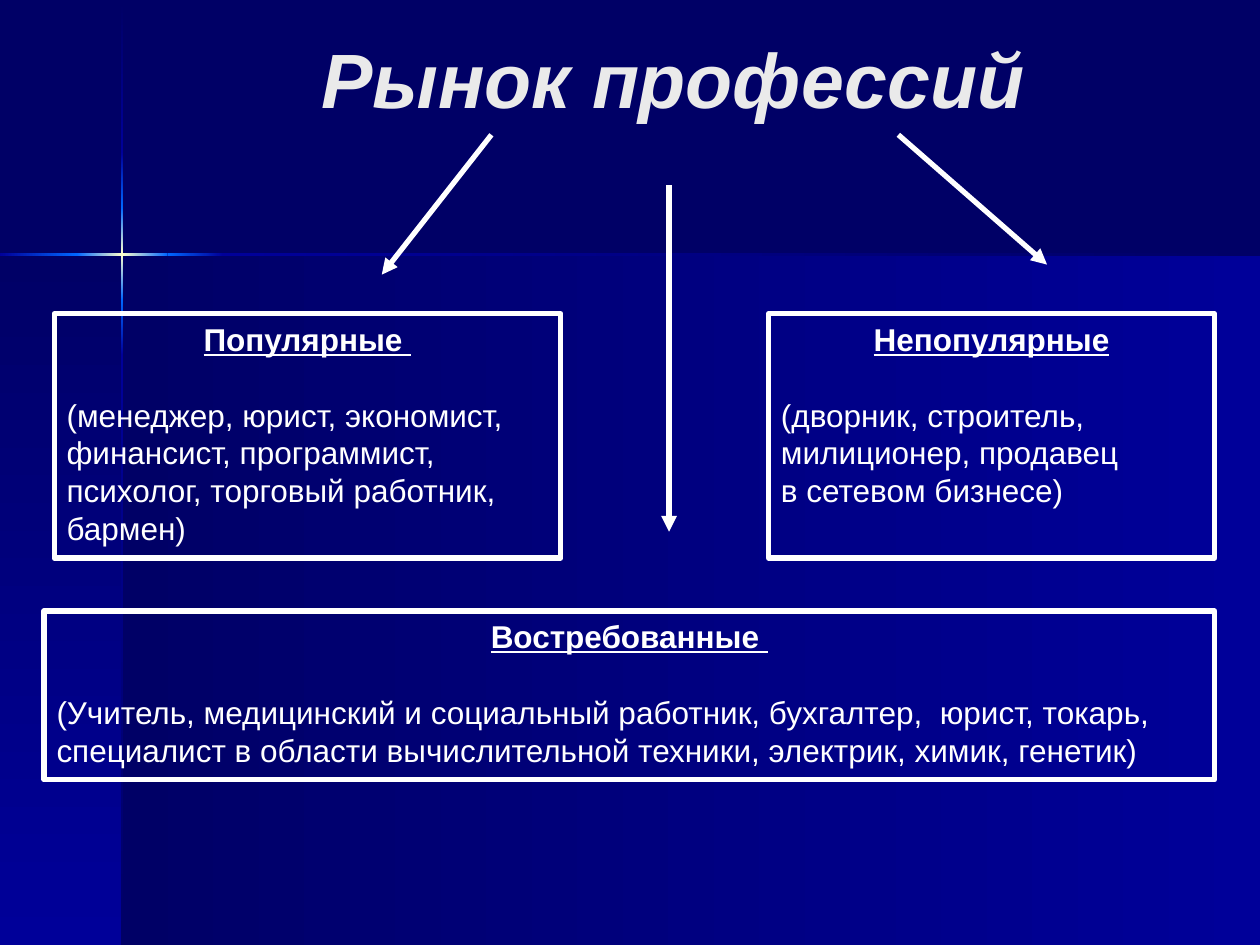
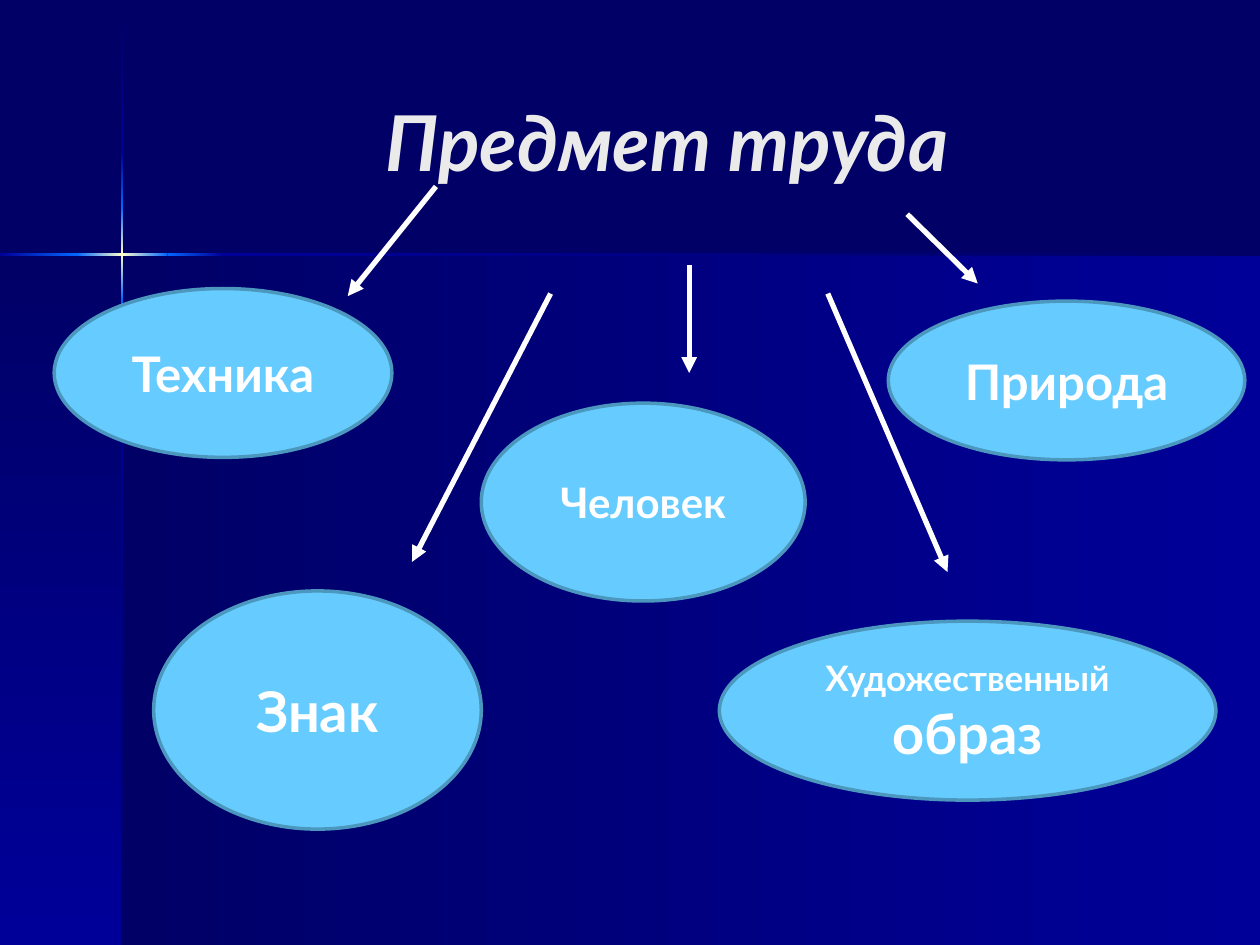
from dataclasses import dataclass
from itertools import pairwise

from lxml.etree import SubElement
from pptx import Presentation
from pptx.dml.color import RGBColor
from pptx.enum.shapes import MSO_CONNECTOR, MSO_SHAPE
from pptx.enum.text import MSO_ANCHOR, MSO_AUTO_SIZE, PP_ALIGN
from pptx.oxml.ns import qn
from pptx.util import Inches, Pt

COLUMNS, ROWS = 100, 75
CELL = Inches(10) / COLUMNS


@dataclass(frozen=True)
class Theme:
    """Colours, fonts and sizes shared by the slides."""

    deep: str = "000066"
    royal: str = "000099"
    bright: str = "0066FF"
    cream: str = "FFFFCC"
    title: str = "EAEAEA"
    white: str = "FFFFFF"
    sky: str = "66CCFF"
    rim: str = "4B97BD"
    plain_font: str = "Arial"
    round_font: str = "Lato"
    title_size: int = 44
    body_size: int = 18
    leading: float = 21.6
    stroke: int = 3
    rim_width: int = 2


@dataclass(frozen=True)
class Box:
    """A rectangle counted in grid columns and rows."""

    left: float
    top: float
    width: float
    height: float

    def inner(self, left, top, width, height):
        """Return a box whose corner is counted from this one."""
        return Box(self.left + left, self.top + top, width, height)

    def emu(self):
        """Return the box as slide lengths."""
        return [round(side * CELL) for side in (self.left, self.top, self.width, self.height)]


THEME = Theme()
SLIDE = Box(0, 0, COLUMNS, ROWS)


def apply(target, values):
    """Set each attribute named in the dict."""
    for name, value in values.items():
        setattr(target, name, value)


def write(para, words, size, font, color=THEME.white, **values):
    """Add a run of formatted text to a paragraph."""
    span = para.add_run()
    span.text = words
    apply(span.font, {"size": Pt(size), "name": font, **values})
    span.font.color.rgb = RGBColor.from_string(color)


def draw(page, kind, box, fill=None, line=None, width=0):
    """Add a preset shape with a plain fill and line."""
    shape = page.shapes.add_shape(kind, *box.emu())
    shape.shadow.inherit = False
    for paint, color in ((shape.fill, fill), (shape.line.fill, line)):
        if color:
            paint.solid()
            paint.fore_color.rgb = RGBColor.from_string(color)
        else:
            paint.background()
    if line:
        shape.line.width = Pt(width)
    return shape


def draw_gradient(page, box, colors, vertical):
    """Add a borderless rectangle with evenly spaced gradient colours."""
    shape = draw(page, MSO_SHAPE.RECTANGLE, box)
    shape.fill.gradient()
    gradient = shape.element.spPr.find(qn("a:gradFill"))
    stops = gradient.find(qn("a:gsLst"))
    for stop in list(stops):
        stops.remove(stop)
    for index, color in enumerate(colors):
        position = 100000 * index // (len(colors) - 1)
        stop = SubElement(stops, qn("a:gs"), pos=str(position))
        SubElement(stop, qn("a:srgbClr"), val=color)
    gradient.find(qn("a:lin")).set("ang", "5400000" if vertical else "0")
    return shape


def draw_backdrop(page, box):
    """Draw the two panels and the glowing cross."""
    panel = (THEME.deep, THEME.royal)
    blends = [
        panel,
        (THEME.royal, THEME.bright),
        (THEME.bright, THEME.cream, THEME.bright),
        (THEME.bright, THEME.royal),
        (THEME.royal, THEME.deep),
    ]
    across, down, beam = 9.7, 20.2, 0.2
    shapes = [
        draw_gradient(page, box.inner(across, down, box.width - across, box.height - down), panel, False),
        draw_gradient(page, box.inner(0, down, across, box.height - down), panel, True),
    ]
    for (start, end), colors in zip(pairwise((0.1, 12.1, 16.5, 23.8, 28.2, box.height)), blends):
        shapes.append(draw_gradient(page, box.inner(across - beam / 2, start, beam, end - start), colors, True))
    for (start, end), colors in zip(pairwise((0, 6.1, 13.3, 17.7, box.width)), blends[1:]):
        shapes.append(draw_gradient(page, box.inner(start, down - beam / 2, end - start, beam), colors, False))
    return shapes


def set_master(deck, page):
    """Give the slide master its background and backdrop."""
    master = deck.slide_master
    master.background.fill.solid()
    master.background.fill.fore_color.rgb = RGBColor.from_string(THEME.deep)
    for index, shape in enumerate(draw_backdrop(page, SLIDE)):
        shape.element.nvSpPr.cNvPr.set("id", str(100 + index))
        master.shapes.element.insert(2 + index, shape.element)


def set_title(page, box, words, font):
    """Place and format the title."""
    title = page.shapes.title
    apply(title, dict(zip(("left", "top", "width", "height"), box.emu())))
    apply(title.text_frame, {"vertical_anchor": MSO_ANCHOR.MIDDLE, "auto_size": MSO_AUTO_SIZE.NONE, "word_wrap": True})
    para = title.text_frame.paragraphs[0]
    para.alignment = PP_ALIGN.CENTER
    write(para, words, THEME.title_size, font, THEME.title, bold=True, italic=True)


def draw_arrows(page, box, arrows):
    """Draw arrows between points counted from the corner of the box."""
    for start, end in arrows:
        points = [box.inner(*point, 0, 0).emu()[:2] for point in (start, end)]
        arrow = page.shapes.add_connector(MSO_CONNECTOR.STRAIGHT, *points[0], *points[1])
        arrow.line.color.rgb = RGBColor.from_string(THEME.white)
        arrow.line.width = Pt(THEME.stroke)
        properties = arrow.element.spPr
        SubElement(properties.find(qn("a:ln")), qn("a:tailEnd"), type="triangle")
        SubElement(properties, qn("a:effectLst"))


def draw_card(page, box, heading, lines):
    """Draw an outlined card with a heading above its text."""
    card = draw(page, MSO_SHAPE.RECTANGLE, box, line=THEME.white, width=THEME.stroke)
    frame = card.text_frame
    apply(frame, {"word_wrap": True, "vertical_anchor": MSO_ANCHOR.TOP})
    for index, words in enumerate([heading, *lines]):
        is_heading = index == 0
        para = frame.paragraphs[0] if is_heading else frame.add_paragraph()
        apply(para, {
            "alignment": PP_ALIGN.CENTER if is_heading else PP_ALIGN.LEFT,
            "line_spacing": Pt(THEME.leading),
            "space_after": Pt(THEME.leading if is_heading else 0),
        })
        write(para, words, THEME.body_size, THEME.plain_font, bold=is_heading, underline=is_heading)


def draw_bubble(page, box, spans):
    """Draw an ellipse with centred bold words, each with its size."""
    bubble = draw(page, MSO_SHAPE.OVAL, box, THEME.sky, THEME.rim, THEME.rim_width)
    apply(bubble.text_frame, {"word_wrap": True, "vertical_anchor": MSO_ANCHOR.MIDDLE})
    para = bubble.text_frame.paragraphs[0]
    para.alignment = PP_ALIGN.CENTER
    for words, size in spans:
        write(para, words, size, THEME.round_font, bold=True)


def build_market(page, box):
    """Build the slide on the market of professions."""
    set_title(page, box.inner(12.2, 0, 82.5, 12.3), "Рынок профессий", THEME.plain_font)
    cards = [
        ((4.3, 24.9, 40.2, 19.4), "Популярные ",
         ["(менеджер, юрист, экономист, финансист, программист, психолог, торговый работник, бармен)"]),
        ((3.5, 48.5, 92.9, 13.4), "Востребованные ",
         ["(Учитель, медицинский и социальный работник, бухгалтер,  юрист, токарь, "
          "специалист в области вычислительной техники, электрик, химик, генетик)"]),
        ((61, 24.9, 35.4, 19.4), "Непопулярные",
         ["(дворник, строитель,", "милиционер, продавец", "в сетевом бизнесе)"]),
    ]
    for place, heading, lines in cards:
        draw_card(page, box.inner(*place), heading, lines)
    draw_arrows(page, box, [
        ((39, 10.7), (30.3, 21.8)),
        ((71.3, 10.7), (83.1, 21)),
        ((53.1, 14.7), (53.1, 42.2)),
    ])


def build_subjects(page, box):
    """Build the slide on the subjects of labour."""
    set_title(page, box.inner(11.7, 3.3, 82.5, 15.7), "Предмет труда", THEME.round_font)
    bubbles = [
        ((4.3, 22.9, 26.8, 13.4), [("Техника", 28)]),
        ((38.2, 32, 25.7, 15.7), [("Человек", 24)]),
        ((12.2, 46.9, 26, 18.9), [("Знак", 32)]),
        ((70.5, 23.9, 28.3, 12.6), [("Природа", 28)]),
        ((57.1, 49.3, 39.4, 14.2), [("Художественный ", 20), ("образ", 32)]),
    ]
    for place, spans in bubbles:
        draw_bubble(page, box.inner(*place), spans)
    draw_arrows(page, box, [
        ((34.6, 14.8), (27.6, 23.5)),
        ((43.7, 23.3), (32.7, 44.6)),
        ((54.7, 21), (54.7, 29.6)),
        ((65.7, 23.3), (75.2, 45.4)),
        ((72, 17), (77.6, 22.5)),
    ])


def main():
    """Build the deck and save it."""
    deck = Presentation()
    apply(deck, {"slide_width": round(COLUMNS * CELL), "slide_height": round(ROWS * CELL)})
    title_only = deck.slide_layouts.get_by_name("Title Only")
    pages = [deck.slides.add_slide(title_only) for _ in range(2)]
    set_master(deck, pages[0])
    for page, build in zip(pages, (build_market, build_subjects)):
        build(page, SLIDE)
    deck.save("out.pptx")


if __name__ == "__main__":
    main()
